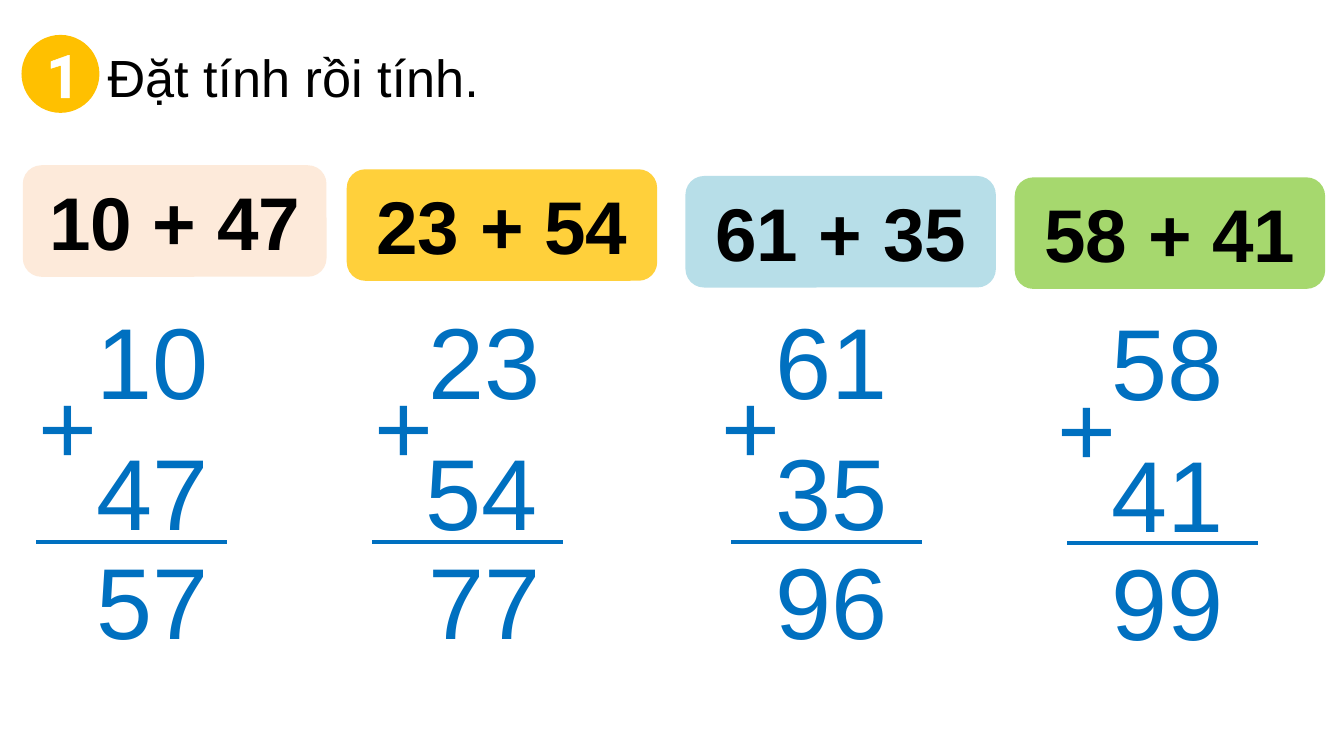
from dataclasses import dataclass

from lxml import etree
from pptx import Presentation, util as u
from pptx.dml.color import RGBColor
from pptx.enum import shapes, text
from pptx.oxml.ns import qn

# The slide is measured in square cells, 100 columns across.
CELL = u.Inches(0.1)
COLUMNS, ROWS = 100, 56.25
BLUE, BLACK, WHITE, AMBER = "0070C0", "000000", "FFFFFF", "FFC000"
CENTER = text.PP_ALIGN.CENTER
NUMBER_WIDTH, NUMBER_HEIGHT = 11.7, 10.1
RULE_WIDTH = 14.2
CARD_HEIGHT = 8.3


@dataclass
class Addition:
    first: int
    second: int
    fill: str
    card_left: float
    card_top: float
    card_width: float
    number_left: float
    plus_left: float
    rule_left: float
    top: float
    second_shift: float = 0


ADDITIONS = [
    Addition(10, 47, "FDEADA", 1.7, 12.3, 22.6, 5.5, -0.8, 2.7, 21.7),
    Addition(23, 54, "FFD03B", 25.8, 12.6, 23.1, 30.2, 24.2, 27.7, 21.7, -0.2),
    Addition(61, 35, "B7DEE8", 51, 13.1, 23.1, 56, 50, 54.4, 21.7),
    Addition(58, 41, "A6D86E", 75.5, 13.2, 23.1, 81, 75, 79.4, 21.8),
]


def cells(*counts: float) -> list[int]:
    return [u.Emu(round(count * CELL)) for count in counts]


def color(value: str) -> RGBColor:
    return RGBColor.from_string(value)


def write(shape, words: str, size: float, tint: str, bold: bool = False,
          align=CENTER, font: str = "Arial") -> None:
    paragraph = shape.text_frame.paragraphs[0]
    paragraph.add_run().text = words
    paragraph.alignment = align
    paragraph.font.name = font
    paragraph.font.size = u.Pt(size)
    paragraph.font.bold = bold
    paragraph.font.color.rgb = color(tint)


def add_filled(slide, kind, box: tuple, fill: str):
    shape = slide.shapes.add_shape(kind, *cells(*box))
    shape.shadow.inherit = False
    shape.fill.solid()
    shape.fill.fore_color.rgb = color(fill)
    shape.line.fill.background()
    shape.text_frame.vertical_anchor = text.MSO_ANCHOR.MIDDLE
    return shape


def add_number(slide, left: float, top: float, words: str) -> None:
    box = slide.shapes.add_textbox(*cells(left, top, NUMBER_WIDTH, NUMBER_HEIGHT))
    box.text_frame.word_wrap = True
    box.text_frame.auto_size = text.MSO_AUTO_SIZE.SHAPE_TO_FIT_TEXT
    write(box, words, 54, BLUE)


def add_rule(slide, left: float, top: float) -> None:
    rule = slide.shapes.add_connector(
        shapes.MSO_CONNECTOR.STRAIGHT, *cells(left, top, left + RULE_WIDTH, top))
    rule.line.color.rgb = color(BLUE)
    rule.line.width = u.Pt(2.25)
    etree.SubElement(rule._element.spPr, qn("a:effectLst"))


def add_addition(slide, addition: Addition) -> None:
    """Draw the coloured card and the column sum below it."""
    first, second, top = addition.first, addition.second, addition.top
    left = addition.number_left
    card = add_filled(
        slide, shapes.MSO_SHAPE.ROUNDED_RECTANGLE,
        (addition.card_left, addition.card_top, addition.card_width, CARD_HEIGHT),
        addition.fill)
    write(card, f"{first} + {second}", 40, BLACK, bold=True)
    add_number(slide, left, top, str(first))
    add_number(slide, left + addition.second_shift, top + 9.8, str(second))
    add_number(slide, addition.plus_left, top + 4.9, "+")
    add_rule(slide, addition.rule_left, top + 18.6)
    add_number(slide, left, top + 17.9, str(first + second))


def add_title(slide) -> None:
    title = slide.shapes.title
    title.left, title.top, title.width, title.height = cells(7, 1, 68.8, 9.4)
    title.text_frame.auto_size = text.MSO_AUTO_SIZE.NONE
    title.text_frame.vertical_anchor = text.MSO_ANCHOR.MIDDLE
    write(title, "Đặt tính rồi tính. ", 28, BLACK, align=text.PP_ALIGN.JUSTIFY)


def add_badge(slide) -> None:
    badge = add_filled(slide, shapes.MSO_SHAPE.OVAL, (1.6, 2.6, 5.8, 5.8), AMBER)
    write(badge, "1", 32, WHITE, bold=True, font="Roboto")
    properties = badge.text_frame.paragraphs[0].runs[0].font._element
    outline = etree.SubElement(properties, qn("a:ln"), w=str(u.Pt(1.45)))
    fill = etree.SubElement(outline, qn("a:solidFill"))
    etree.SubElement(fill, qn("a:srgbClr"), val=WHITE)


def main() -> None:
    presentation = Presentation()
    presentation.slide_width, presentation.slide_height = cells(COLUMNS, ROWS)
    slide = presentation.slides.add_slide(presentation.slide_layouts[5])
    add_title(slide)
    for addition in ADDITIONS:
        add_addition(slide, addition)
    add_badge(slide)
    presentation.save("out.pptx")


if __name__ == "__main__":
    main()
